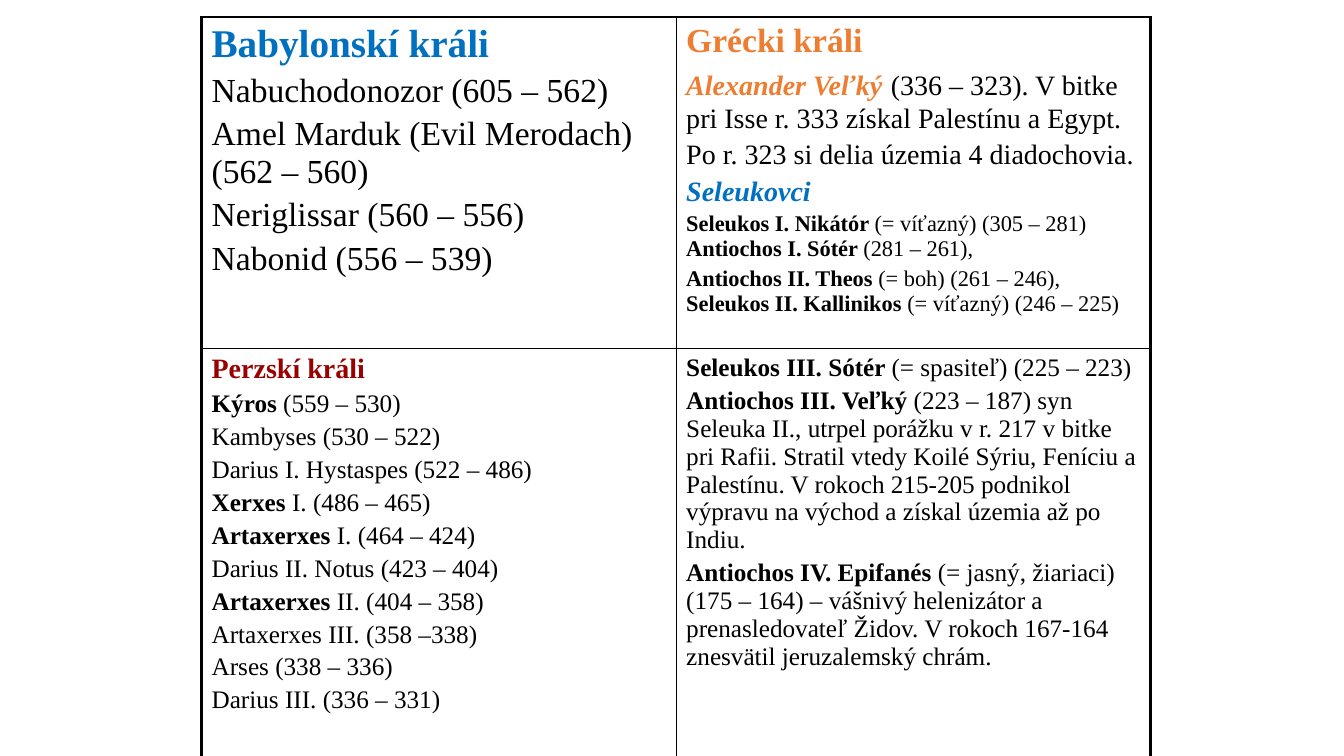
from lxml import etree
from pptx import Presentation
from pptx.dml.color import RGBColor
from pptx.oxml.ns import qn
from pptx.util import Cm, Pt

HUES = {"ink": "000000", "blue": "0070C0", "orange": "ED7D31", "red": "990000"}
FONT = "Times New Roman"
THIN, THICK = 1, 2.25


def line(text, size):
    """Split text into runs; words between asterisks are bold."""
    return [(part, size, "ink", "b" if i % 2 else "")
            for i, part in enumerate(text.split("*")) if part]


def head(text, size, hue, style="b"):
    return [(text, size, hue, style)]


BABYLON = [head("Babylonskí králi", 28, "blue")] + [line(text, 24) for text in (
    "Nabuchodonozor (605 – 562)",
    "Amel Marduk (Evil Merodach) (562 – 560)",
    "Neriglissar (560 – 556)",
    "Nabonid (556 – 539)",
)]

GREECE = [
    head("Grécki králi", 24, "orange"),
    head("Alexander Veľký", 20, "orange", "bi")
    + head(" ", 24, "orange", "bi")
    + line("(336 – 323). V bitke pri Isse r. 333 získal Palestínu a Egypt.", 20),
    line("Po r. 323 si delia územia 4 diadochovia.", 20),
    head("Seleukovci", 20, "blue", "bi"),
    line("*Seleukos I. Nikátór *(= víťazný) (305 – 281) "
         "*Antiochos I. Sótér *(281 – 261),", 16),
    line("*Antiochos II. Theos *(= boh) (261 – 246), "
         "*Seleukos II. Kallinikos *(= víťazný) (246 – 225)", 16),
]

PERSIA = [head("Perzskí králi", 20, "red")] + [line(text, 18) for text in (
    "*Kýros* (559 – 530)",
    "Kambyses (530 – 522)",
    "Darius I. Hystaspes (522 – 486)",
    "*Xerxes* I. (486 – 465)",
    "*Artaxerxes* I. (464 – 424)",
    "Darius II. Notus (423 – 404)",
    "*Artaxerxes* II. (404 – 358)",
    "Artaxerxes III. (358 –338)",
    "Arses (338 – 336)",
    "Darius III. (336 – 331)",
)]

SYRIA = [line(text, 18) for text in (
    "*Seleukos III. Sótér *(= spasiteľ) (225 – 223)",
    "*Antiochos III. Veľký *(223 – 187) syn Seleuka II., utrpel porážku v r. 217 "
    "v bitke pri Rafii. Stratil vtedy Koilé Sýriu, Feníciu a Palestínu. V rokoch "
    "215-205 podnikol výpravu na východ a získal územia až po Indiu.",
    "*Antiochos IV. Epifanés *(= jasný, žiariaci) (175 – 164) – vášnivý helenizátor "
    "a prenasledovateľ Židov. V rokoch 167-164 znesvätil jeruzalemský chrám.",
)]


class Deck:
    def __init__(self):
        self.prs = Presentation()
        self.prs.slide_width, self.prs.slide_height = Cm(33.87), Cm(19.05)
        self.slide = self.prs.slides.add_slide(self.prs.slide_layouts[6])

    def table(self, left, top, width, heights, rows):
        count = len(rows[0])
        frame = self.slide.shapes.add_table(
            len(rows), count, Cm(left), Cm(top), Cm(width * count), Cm(sum(heights)))
        grid = frame.table
        grid.first_row = grid.horz_banding = False
        for col in grid.columns:
            col.width = Cm(width)
        for r, cells in enumerate(rows):
            grid.rows[r].height = Cm(heights[r])
            for c, lines in enumerate(cells):
                cell = grid.cell(r, c)
                self.lines(cell.text_frame, lines)
                # The heavy frame leaves the top of the right column thin.
                heavy = {"lnL": c == 0, "lnR": c == count - 1,
                         "lnT": r == c == 0, "lnB": r == len(rows) - 1}
                self.edges(cell, heavy)
                cell.fill.background()

    def edges(self, cell, heavy):
        props = cell._tc.get_or_add_tcPr()
        for tag, thick in heavy.items():
            edge = etree.SubElement(props, qn("a:" + tag))
            edge.set("w", str(Pt(THICK if thick else THIN)))
            fill = etree.SubElement(edge, qn("a:solidFill"))
            etree.SubElement(fill, qn("a:srgbClr")).set("val", HUES["ink"])

    def lines(self, frame, lines):
        for i, runs in enumerate(lines):
            para = frame.add_paragraph() if i else frame.paragraphs[0]
            if i:
                para.space_before = Pt(max(run[1] for run in runs) * 0.2)
            for text, size, hue, style in runs:
                run = para.add_run()
                run.text = text
                font = run.font
                font.name, font.size = FONT, Pt(size)
                font.bold, font.italic = "b" in style, "i" in style
                font.color.rgb = RGBColor.from_string(HUES[hue])


def main():
    deck = Deck()
    deck.table(5.08, 0.43, 11.96, [8.36, 10.62],
               [[BABYLON, GREECE], [PERSIA, SYRIA]])
    deck.prs.save("out.pptx")


if __name__ == "__main__":
    main()
